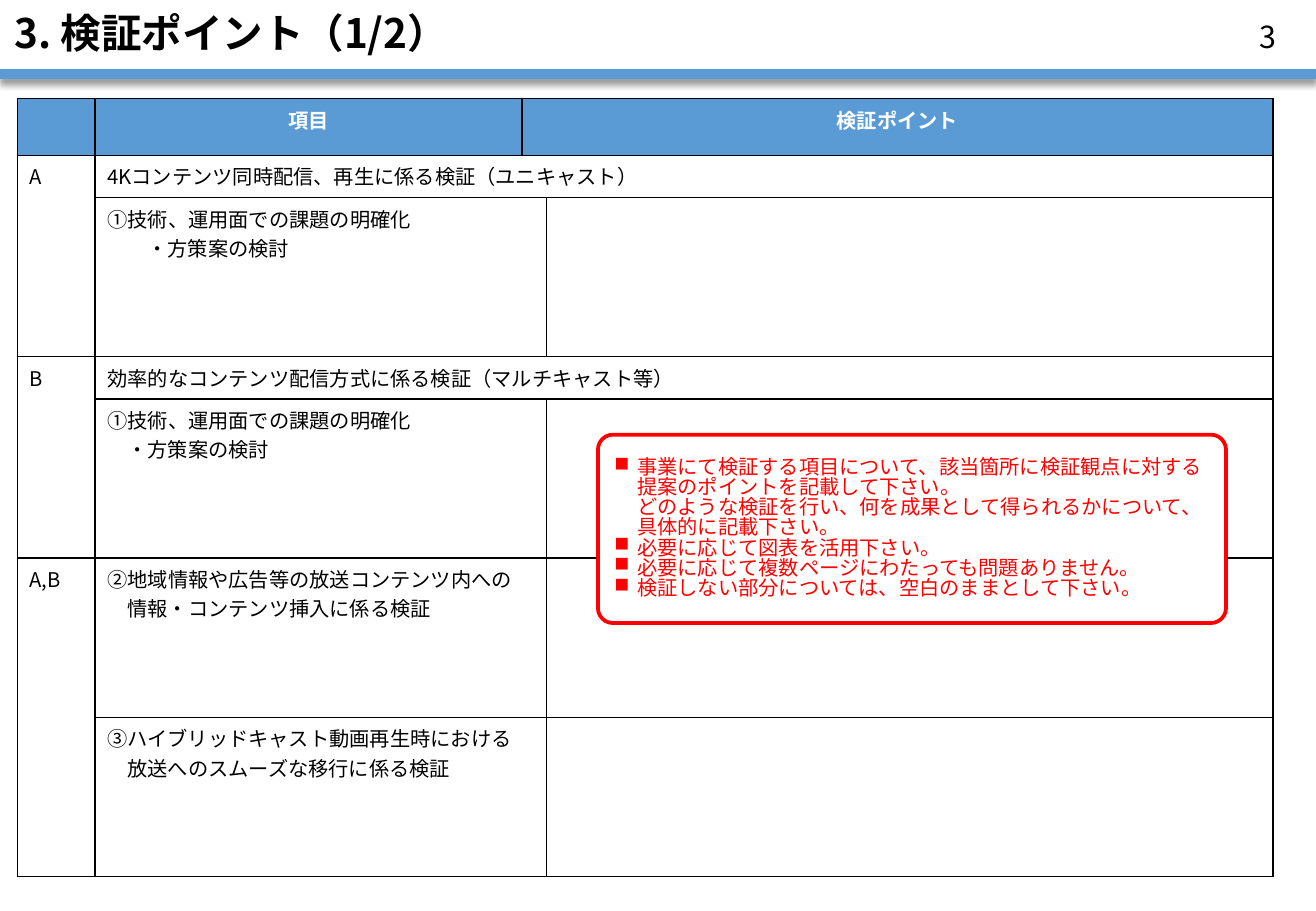
"""Build the slide listing the verification points."""
from dataclasses import dataclass
from typing import Any

import lxml.etree
import pptx
import pptx.dml.color
import pptx.enum.shapes
import pptx.enum.text
import pptx.oxml
import pptx.oxml.ns
import pptx.util

Cm = pptx.util.Cm
Pt = pptx.util.Pt
qn = pptx.oxml.ns.qn
ALIGN = pptx.enum.text.PP_ALIGN
ANCHOR = pptx.enum.text.MSO_ANCHOR
SHAPE = pptx.enum.shapes.MSO_SHAPE

FONT = "Noto Sans CJK JP"
COLORS = {"blue": "5B9BD5", "black": "000000", "white": "FFFFFF", "red": "FF0000"}
NAMESPACE = 'xmlns:a="http://schemas.openxmlformats.org/drawingml/2006/main"'
PAGE_WIDTH, PAGE_HEIGHT = 27.51, 19.05
EM = 0.42
BULLET_INDENT = 0.48
COLUMN_WIDTHS = (1.63, 8.92, 0.51, 15.19)
ROW_HEIGHTS = (1.19, 0.88, 3.33, 0.88, 3.33, 3.33, 3.33)


@dataclass(frozen=True)
class TextStyle:
    size: float
    color: str = "black"
    bold: bool = False
    align: Any = ALIGN.LEFT
    spacing: float = 1.0


@dataclass(frozen=True)
class Entry:
    row: int
    column: int
    text: str = ""
    rows: int = 1
    columns: int = 1
    second_line_ems: int = 0


HEADER = TextStyle(12, "white", True, ALIGN.CENTER)
BODY = TextStyle(12)

ENTRIES = (
    Entry(0, 1, "項目"),
    Entry(0, 2, "検証ポイント", columns=2),
    Entry(1, 0, "A", rows=2),
    Entry(1, 1, "4Kコンテンツ同時配信、再生に係る検証（ユニキャスト）", columns=3),
    Entry(2, 1, "①技術、運用面での課題の明確化\n・方策案の検討", columns=2, second_line_ems=2),
    Entry(3, 0, "B", rows=2),
    Entry(3, 1, "効率的なコンテンツ配信方式に係る検証（マルチキャスト等）", columns=3),
    Entry(4, 1, "①技術、運用面での課題の明確化\n・方策案の検討", columns=2, second_line_ems=1),
    Entry(5, 0, "A,B", rows=2),
    Entry(5, 1, "②地域情報や広告等の放送コンテンツ内への\n情報・コンテンツ挿入に係る検証",
          columns=2, second_line_ems=1),
    Entry(6, 1, "③ハイブリッドキャスト動画再生時における\n放送へのスムーズな移行に係る検証",
          columns=2, second_line_ems=1),
)

GUIDANCE = (
    "事業にて検証する項目について、該当箇所に検証観点に対する提案のポイントを記載して下さい。"
    "\vどのような検証を行い、何を成果として得られるかについて、\v具体的に記載下さい。",
    "必要に応じて図表を活用下さい。",
    "必要に応じて複数ページにわたっても問題ありません。",
    "検証しない部分については、空白のままとして下さい。",
)


def rgb(name: str) -> pptx.dml.color.RGBColor:
    return pptx.dml.color.RGBColor.from_string(COLORS[name])


def append_xml(parent: Any, xml: str) -> None:
    parent.append(pptx.oxml.parse_xml(xml))


def write(frame: Any, text: str, style: TextStyle) -> None:
    frame.text = text
    frame.word_wrap = True
    for para in frame.paragraphs:
        para.alignment = style.align
        para.line_spacing = style.spacing
        for span in para.runs:
            span.font.name = FONT
            span.font.size = Pt(style.size)
            span.font.bold = style.bold
            span.font.color.rgb = rgb(style.color)
            properties = span.font._element
            properties.set("lang", "ja-JP")
            east_asian = lxml.etree.Element(qn("a:ea"), typeface=FONT)
            properties.find(qn("a:latin")).addnext(east_asian)


def set_insets(frame: Any, horizontal: float, vertical: float) -> None:
    frame.margin_left = frame.margin_right = Cm(horizontal)
    frame.margin_top = frame.margin_bottom = Cm(vertical)
    frame.vertical_anchor = ANCHOR.MIDDLE


def add_heading(page: Any) -> None:
    rule = page.shapes.add_connector(
        pptx.enum.shapes.MSO_CONNECTOR.STRAIGHT, 0, Cm(1.54), Cm(PAGE_WIDTH), Cm(1.54))
    rule.line.color.rgb = rgb("blue")
    rule.line.width = Pt(6)
    append_xml(rule._element.spPr, (
        f'<a:effectLst {NAMESPACE}><a:outerShdw blurRad="{Pt(4)}" dist="{Pt(3)}" '
        f'dir="5400000" rotWithShape="0"><a:srgbClr val="{COLORS["black"]}">'
        '<a:alpha val="40000"/></a:srgbClr></a:outerShdw></a:effectLst>'))

    title = page.shapes.add_textbox(0, 0, Cm(PAGE_WIDTH), Cm(1.5))
    write(title.text_frame, "3. 検証ポイント（1/2）", TextStyle(24, bold=True, spacing=0.9))
    set_insets(title.text_frame, 0.3, 0.1)

    number = page.shapes.add_shape(SHAPE.RECTANGLE, Cm(26.01), Cm(0.36), Cm(0.99), Cm(0.79))
    number.shadow.inherit = False
    number.fill.solid()
    number.fill.fore_color.rgb = rgb("white")
    number.line.fill.background()
    write(number.text_frame, "3", TextStyle(18, align=ALIGN.CENTER))
    set_insets(number.text_frame, 0, 0.13)


def format_cell(cell: Any, is_header: bool) -> None:
    write(cell.text_frame, "", HEADER if is_header else BODY)
    properties = cell._tc.get_or_add_tcPr()
    for side in ("lnL", "lnR", "lnT", "lnB"):
        append_xml(properties, (
            f'<a:{side} {NAMESPACE} w="{Pt(1)}"><a:solidFill>'
            f'<a:srgbClr val="{COLORS["black"]}"/></a:solidFill></a:{side}>'))
    if is_header:
        cell.fill.solid()
        cell.fill.fore_color.rgb = rgb("blue")
    else:
        cell.fill.background()


def add_points_table(page: Any) -> None:
    table = page.shapes.add_table(
        len(ROW_HEIGHTS), len(COLUMN_WIDTHS), Cm(0.36), Cm(2.06),
        Cm(sum(COLUMN_WIDTHS)), Cm(sum(ROW_HEIGHTS))).table
    table.horz_banding = False
    for column, width in zip(table.columns, COLUMN_WIDTHS):
        column.width = Cm(width)
    for index, (row, height) in enumerate(zip(table.rows, ROW_HEIGHTS)):
        row.height = Cm(height)
        for cell in row.cells:
            format_cell(cell, index == 0)
    for entry in ENTRIES:
        cell = table.cell(entry.row, entry.column)
        if entry.rows * entry.columns > 1:
            cell.merge(table.cell(entry.row + entry.rows - 1, entry.column + entry.columns - 1))
        write(cell.text_frame, entry.text, BODY if entry.row else HEADER)
        for para in cell.text_frame.paragraphs[1:]:
            para._p.get_or_add_pPr().set("marL", str(Cm(EM * entry.second_line_ems)))


def add_guidance(page: Any) -> None:
    box = page.shapes.add_shape(
        SHAPE.ROUNDED_RECTANGLE, Cm(12.5), Cm(9.09), Cm(13.13), Cm(3.94))
    box.adjustments[0] = 0.08
    box.shadow.inherit = False
    box.fill.solid()
    box.fill.fore_color.rgb = rgb("white")
    box.line.color.rgb = rgb("red")
    box.line.width = Pt(2.25)
    write(box.text_frame, "\n".join(GUIDANCE), TextStyle(12, "red", spacing=0.83))
    box.text_frame.vertical_anchor = ANCHOR.MIDDLE
    for para in box.text_frame.paragraphs:
        properties = para._p.get_or_add_pPr()
        properties.set("marL", str(Cm(BULLET_INDENT)))
        properties.set("indent", str(-Cm(BULLET_INDENT)))
        append_xml(properties, f'<a:buFont {NAMESPACE} typeface="Wingdings" charset="2"/>')
        append_xml(properties, f'<a:buChar {NAMESPACE} char="n"/>')


def main() -> None:
    deck = pptx.Presentation()
    deck.slide_width, deck.slide_height = Cm(PAGE_WIDTH), Cm(PAGE_HEIGHT)
    page = deck.slides.add_slide(deck.slide_layouts[6])
    add_heading(page)
    add_points_table(page)
    add_guidance(page)
    deck.save("out.pptx")


if __name__ == "__main__":
    main()
